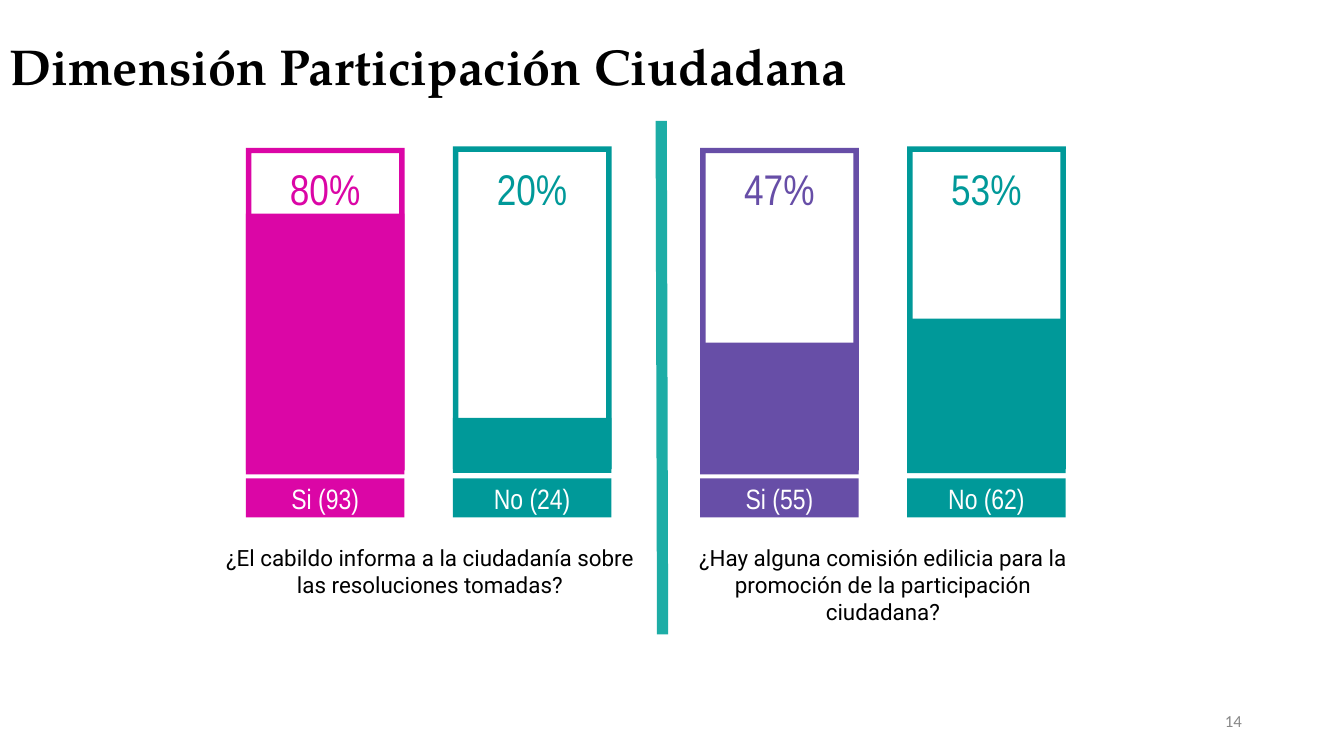
from typing import NamedTuple

from lxml.etree import SubElement
from pptx import Presentation
from pptx.dml.color import RGBColor
from pptx.enum.shapes import MSO_CONNECTOR, MSO_SHAPE
from pptx.enum.text import MSO_ANCHOR, PP_ALIGN
from pptx.oxml.ns import qn
from pptx.util import Inches, Pt

BLACK = RGBColor(0x00, 0x00, 0x00)
WHITE = RGBColor(0xFF, 0xFF, 0xFF)
GRAY = RGBColor(0x88, 0x88, 0x88)
MAGENTA = RGBColor(0xDB, 0x06, 0xA6)
PURPLE = RGBColor(0x67, 0x4E, 0xA7)
TEAL = RGBColor(0x00, 0x99, 0x99)
DIVIDER_TEAL = RGBColor(0x1D, 0xAD, 0xA6)

SLIDE_WIDTH = 10
SLIDE_HEIGHT = SLIDE_WIDTH * 9 / 16
BAR_WIDTH = 1.18
BAR_PITCH = 1.54
FRAME_HEIGHT = 2.4
FRAME_THICKNESS = 0.04
FILL_OFFSET = 2.43
PERCENT_WIDTH = 0.96


class Answer(NamedTuple):
    percent: str
    label: str
    color: RGBColor
    top: float
    fill_height: float


class Question(NamedTuple):
    wording: str
    wording_left: float
    bars_left: float
    answers: tuple[Answer, ...]


QUESTIONS = (
    Question(
        "¿Hay alguna comisión edilicia para la promoción de la participación ciudadana?",
        4.97, 5.21,
        (Answer("47%", "Si (55)", PURPLE, 1.1, 0.98),
         Answer("53%", "No (62)", TEAL, 1.09, 1.15)),
    ),
    Question(
        "¿El cabildo informa a la ciudadanía sobre las resoluciones tomadas?",
        1.6, 1.83,
        (Answer("80%", "Si (93)", MAGENTA, 1.1, 1.94),
         Answer("20%", "No (24)", TEAL, 1.09, 0.41)),
    ),
)


def write_text(shape, text: str, *, font: str, size: float, color: RGBColor = BLACK,
               bold: bool = False, align=PP_ALIGN.CENTER, anchor=MSO_ANCHOR.TOP,
               inset: float = 0.07) -> None:
    """Fill a shape with one formatted paragraph."""
    frame = shape.text_frame
    frame.word_wrap = True
    frame.vertical_anchor = anchor
    frame.margin_left = frame.margin_right = Inches(0.07)
    frame.margin_top = frame.margin_bottom = Inches(inset)
    paragraph = frame.paragraphs[0]
    paragraph.alignment = align
    run = paragraph.add_run()
    run.text = text
    run.font.name = font
    run.font.size = Pt(size)
    run.font.bold = bold
    run.font.color.rgb = color


def add_text(shapes, left: float, top: float, width: float, height: float,
             text: str, **text_format) -> None:
    """Add a text box with one formatted paragraph."""
    box = shapes.add_textbox(Inches(left), Inches(top), Inches(width), Inches(height))
    write_text(box, text, **text_format)


def add_block(shapes, kind: MSO_SHAPE, left: float, top: float, height: float,
              color: RGBColor):
    """Add a solid shape as wide as a bar."""
    block = shapes.add_shape(kind, Inches(left), Inches(top), Inches(BAR_WIDTH), Inches(height))
    block.shadow.inherit = False
    block.fill.solid()
    block.fill.fore_color.rgb = color
    block.line.fill.background()
    return block


def add_bar(shapes, left: float, answer: Answer) -> None:
    """Draw the frame, level, percentage and label of one answer."""
    frame = add_block(shapes, MSO_SHAPE.FRAME, left, answer.top, FRAME_HEIGHT, answer.color)
    frame.adjustments[0] = FRAME_THICKNESS / BAR_WIDTH
    level_top = answer.top + FILL_OFFSET - answer.fill_height
    add_block(shapes, MSO_SHAPE.RECTANGLE, left, level_top, answer.fill_height, answer.color)
    add_text(shapes, left + (BAR_WIDTH - PERCENT_WIDTH) / 2, 1.17, PERCENT_WIDTH, 0.46,
             answer.percent, font="Arial Narrow", size=23, color=answer.color,
             anchor=MSO_ANCHOR.MIDDLE)
    label = add_block(shapes, MSO_SHAPE.RECTANGLE, left, 3.56, 0.29, answer.color)
    write_text(label, answer.label, font="Arial Narrow", size=15, color=WHITE,
               anchor=MSO_ANCHOR.MIDDLE, inset=0)


def add_question(shapes, question: Question) -> None:
    """Draw the grouped bars of a question and its wording."""
    bars = shapes.add_group_shape()
    for position, answer in enumerate(question.answers):
        add_bar(bars.shapes, question.bars_left + position * BAR_PITCH, answer)
    add_text(shapes, question.wording_left, 3.98, 3.2, 0.74, question.wording,
             font="Roboto", size=12)


def add_divider(shapes) -> None:
    """Draw the line between the two questions."""
    divider = shapes.add_connector(MSO_CONNECTOR.STRAIGHT, Inches(4.92), Inches(0.9),
                                   Inches(4.93), Inches(4.72))
    divider.line.color.rgb = DIVIDER_TEAL
    divider.line.width = Pt(6)
    SubElement(divider._element.spPr, qn("a:effectLst"))


def main() -> None:
    """Build and save the slide."""
    presentation = Presentation()
    presentation.slide_width = Inches(SLIDE_WIDTH)
    presentation.slide_height = Inches(SLIDE_HEIGHT)
    shapes = presentation.slides.add_slide(presentation.slide_layouts[6]).shapes
    add_text(shapes, 7.06, 5.21, 2.25, 0.3, "14", font="Calibri", size=9, color=GRAY,
             align=PP_ALIGN.RIGHT, anchor=MSO_ANCHOR.MIDDLE, inset=0.04)
    add_text(shapes, 0, 0.19, 6.8, 0.61, "Dimensión Participación Ciudadana",
             font="TeX Gyre Pagella", size=27, bold=True, align=PP_ALIGN.JUSTIFY)
    add_divider(shapes)
    for question in QUESTIONS:
        add_question(shapes, question)
    presentation.save("out.pptx")


if __name__ == "__main__":
    main()
